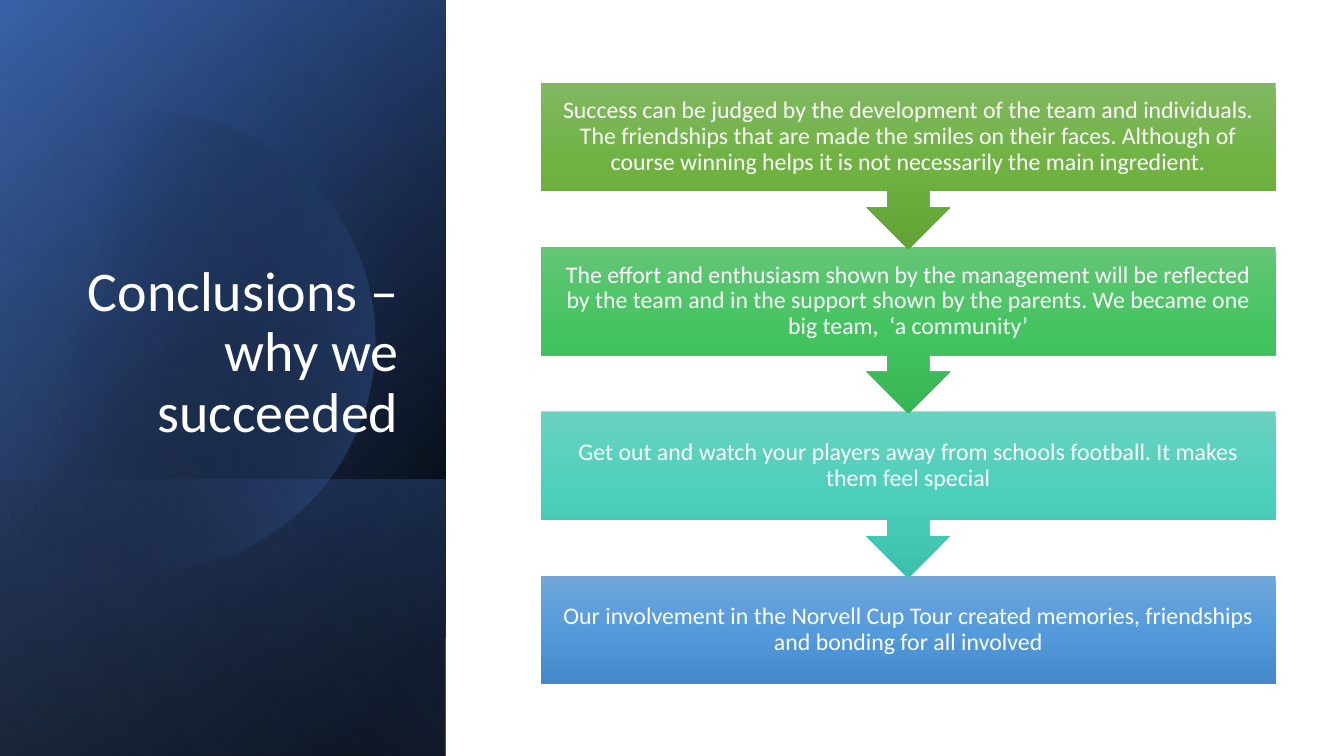
from math import cos, sin, acos, degrees, radians

from lxml.etree import SubElement
from pptx import Presentation
from pptx.dml.color import RGBColor
from pptx.enum.shapes import MSO_SHAPE
from pptx.enum.text import MSO_ANCHOR, PP_ALIGN
from pptx.oxml.ns import qn
from pptx.util import Cm, Pt

TITLE = "Conclusions – why we succeeded"
STEPS = [
    ("Success can be judged by the development of the team and individuals. "
     "The friendships that are made the smiles on their faces. Although of "
     "course winning helps it is not necessarily the main ingredient.",
     ("81B861", "6FB242", "62A336")),
    ("The effort and enthusiasm shown by the management will be reflected by "
     "the team and in the support shown by the parents. We became one big "
     "team,  ‘a community’",
     ("64C677", "44C460", "36B552")),
    ("Get out and watch your players away from schools football. It makes "
     "them feel special",
     ("6AD1C0", "4CD0BC", "3CC0AC")),
    ("Our involvement in the Norvell Cup Tour created memories, friendships "
     "and bonding for all involved",
     ("71A6DB", "559BDB", "448ACA")),
]

WHITE = RGBColor(0xFF, 0xFF, 0xFF)
BLACK = RGBColor(0x00, 0x00, 0x00)
NAVY = RGBColor(0x2F, 0x55, 0x97)
BLUE = RGBColor(0x44, 0x72, 0xC4)
PALE_BLUE = RGBColor(0x8F, 0xAA, 0xDC)

# Lengths in centimetres
SLIDE_W, SLIDE_H = 33.87, 19.05
PANEL_W = 11.23
FOOT_H = 6.96
STEP_X, STEP_Y, STEP_W, STEP_H = 13.63, 2.09, 18.52, 2.72
STEP_PITCH, CALLOUT_H = 4.14, 4.19

# Gradient stops: position %, colour, opacity %
PANEL_BASE = (SLIDE_H, 50, [(8, BLACK, 100), (100, NAVY, 100)])
PANEL_GLOW = (SLIDE_H, 30, [(0, BLACK, 0), (99, BLUE, 46)])
PANEL_FOOT = (FOOT_H, 130, [(2, BLUE, 29), (100, BLACK, 30)])
PANEL_SHEEN = (SLIDE_H, 120, [(0, BLACK, 0), (99, PALE_BLUE, 11)])
DISC_STOPS = [(29, BLACK, 0), (100, BLUE, 43)]


def paint(sp, angle, stops):
    """Give a shape a clockwise linear gradient, no line and no shadow."""
    sp.shadow.inherit = False
    sp.line.fill.background()
    sp.fill.gradient()
    sp.fill.gradient_angle = 360 - angle
    gs_list = sp._element.spPr.find(qn("a:gradFill")).find(qn("a:gsLst"))
    for gs in list(gs_list):
        gs_list.remove(gs)
    for pos, colour, opacity in stops:
        gs = SubElement(gs_list, qn("a:gs"), pos=str(pos * 1000))
        clr = SubElement(gs, qn("a:srgbClr"), val=str(colour))
        if opacity < 100:
            SubElement(clr, qn("a:alpha"), val=str(opacity * 1000))


def add_panel(s, height, angle, stops):
    """Add a mirrored rectangle, turned to stand on the slide's bottom left."""
    shift = (height - PANEL_W) / 2
    sp = s.shapes.add_shape(MSO_SHAPE.RECTANGLE, Cm(-shift),
                            Cm(SLIDE_H - height + shift),
                            Cm(height), Cm(PANEL_W))
    sp.rotation = 90
    sp._element.spPr.find(qn("a:xfrm")).set("flipH", "1")
    paint(sp, angle, stops)


def add_disc(s, cx=3.66, cy=8.59, radius=5.79, cut_x=-0.38):
    """Add a circle whose left side is cut off at cut_x."""
    half = 180 - degrees(acos((cx - cut_x) / radius))
    count = 90
    angles = [radians(-half + 2 * half * i / count) for i in range(count + 1)]
    points = [(Cm(cx + radius * cos(a)), Cm(cy + radius * sin(a)))
              for a in angles]
    builder = s.shapes.build_freeform(*points[0])
    builder.add_line_segments(points[1:], close=True)
    paint(builder.convert_to_shape(), 14, DISC_STOPS)


def write(sp, text, size, align, frame):
    tf = sp.text_frame
    for name, value in frame.items():
        setattr(tf, name, value)
    p = tf.paragraphs[0]
    p.alignment = align
    p.line_spacing = 0.9
    r = p.add_run()
    r.text = text
    for name, value in {"name": "Calibri", "size": Pt(size)}.items():
        setattr(r.font, name, value)
    r.font.color.rgb = WHITE


def add_step(s, index, text, colours):
    last = index == len(STEPS) - 1
    kind = MSO_SHAPE.RECTANGLE if last else MSO_SHAPE.DOWN_ARROW_CALLOUT
    sp = s.shapes.add_shape(kind, Cm(STEP_X), Cm(STEP_Y + index * STEP_PITCH),
                            Cm(STEP_W), Cm(STEP_H if last else CALLOUT_H))
    stops = [(pos, RGBColor.from_string(colour), 100)
             for pos, colour in zip((0, 50, 100), colours)]
    paint(sp, 90, stops)
    frame = {"word_wrap": True, "vertical_anchor": MSO_ANCHOR.MIDDLE}
    for side in ("left", "right", "top", "bottom"):
        frame["margin_" + side] = Cm(0.33)
    write(sp, text, 17, PP_ALIGN.CENTER, frame)


def main():
    prs = Presentation()
    prs.slide_width, prs.slide_height = Cm(SLIDE_W), Cm(SLIDE_H)
    s = prs.slides.add_slide(prs.slide_layouts[6])

    for panel in (PANEL_BASE, PANEL_GLOW, PANEL_FOOT):
        add_panel(s, *panel)
    add_disc(s)
    add_panel(s, *PANEL_SHEEN)

    title = s.shapes.add_textbox(Cm(1.63), Cm(4.67), Cm(8.66), Cm(6.65))
    write(title, TITLE, 40, PP_ALIGN.RIGHT,
          {"word_wrap": True, "vertical_anchor": MSO_ANCHOR.BOTTOM})

    # Bottom step first, so that each arrow tip lies over the next box
    for index, (text, colours) in reversed(list(enumerate(STEPS))):
        add_step(s, index, text, colours)

    prs.save("out.pptx")


if __name__ == "__main__":
    main()
